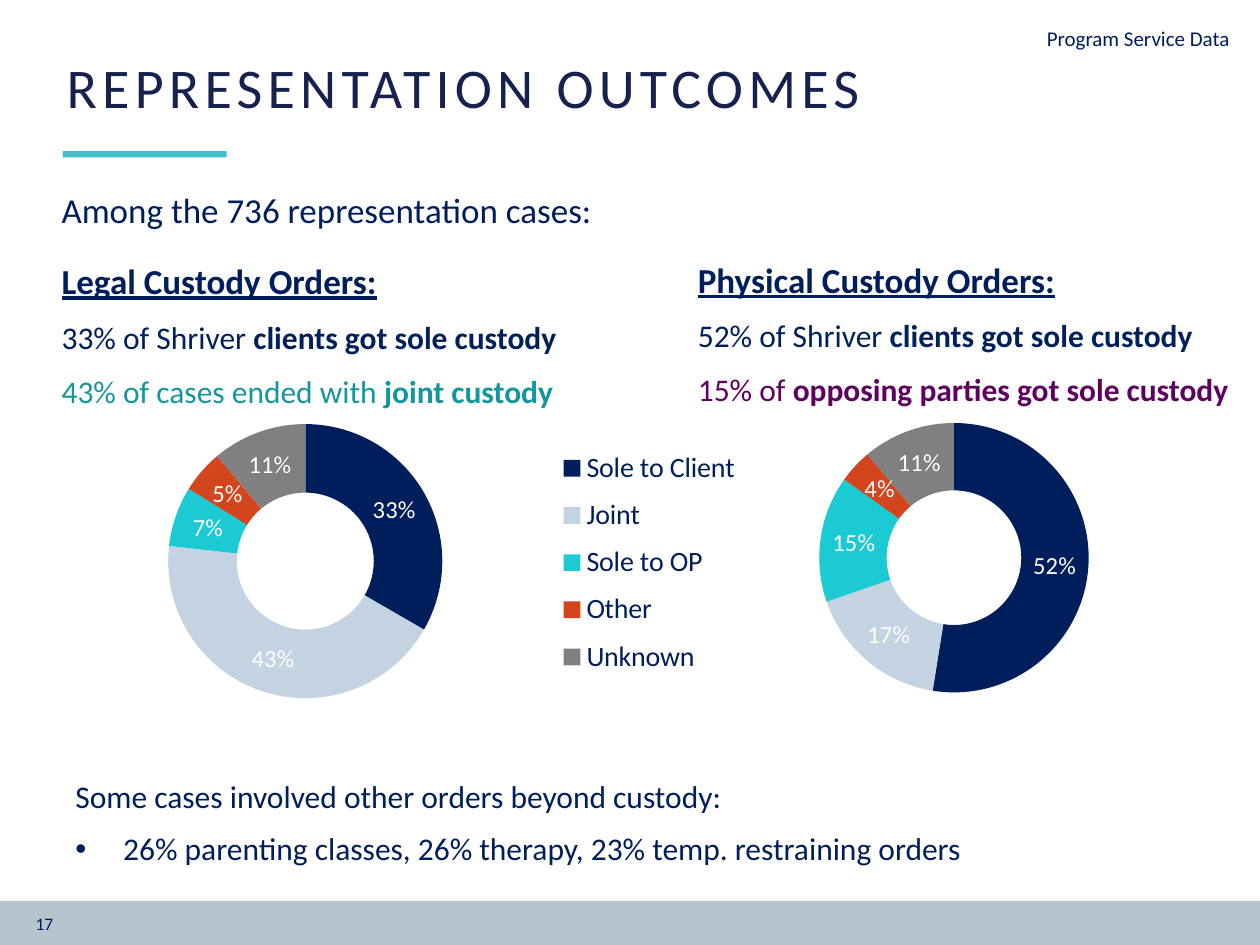
import pptx
import pptx.util
import pptx.chart.data
import pptx.dml.color
import pptx.enum.chart
import pptx.enum.shapes
import pptx.enum.text
import pptx.oxml
import pptx.oxml.ns

Inches, Pt = pptx.util.Inches, pptx.util.Pt
NAVY, BLUE, TEAL, PLUM, WHITE = "001E5B", "00205C", "15969D", "5F005F", "FFFFFF"
SLICES = ["001E5B", "C4D3E1", "1CCAD3", "D3451C", "808080"]
ALIGN = pptx.enum.text.PP_ALIGN

BARS = [((0, 7.15, 10, 0.37), "B5C4CE"), ((0.5, 1.2, 1.3, 0.05), "45BCCE")]


def custody(heading, share, last_share, last_bold, color):
    return [
        [(heading, dict(size=20, bold=True, underline=True))],
        [(share + " ", {}), ("of Shriver ", dict(color=BLUE)),
         ("clients got sole custody", dict(color=BLUE, bold=True))],
        [(last_share, dict(color=color)), (last_bold, dict(color=color, bold=True))],
    ]


# Each text: place, default size, paragraph format, paragraphs of (text, run format)
BODY = dict(line_spacing=1.1, space_after=Pt(6))
ORDERS = dict(line_spacing=1.15, space_after=Pt(6))
TEXTS = [
    ((0, 7.2, 0.52, 0.4), 10, dict(alignment=ALIGN.RIGHT), [[("17", {})]]),
    ((0.43, 0.47, 8.41, 0.54), 32, dict(line_spacing=0.8),
     [[("REPRESENTATION OUTCOMES", dict(color="16214E", spacing=3))]]),
    ((0.39, 1.41, 8.94, 0.45), 20, BODY, [[("Among the 736 representation cases:", {})]]),
    ((0.39, 1.96, 4.49, 1.4), 18, ORDERS,
     custody("Legal Custody Orders:", "33%", "43% of cases ended with ", "joint custody", TEAL)),
    ((5.44, 1.95, 4.49, 1.36), 18, ORDERS,
     custody("Physical Custody Orders:", "52%", "15% of ",
             "opposing parties got sole custody", PLUM)),
    ((0.5, 6.09, 8.83, 0.83), 18, BODY,
     [[("Some cases involved other orders beyond custody:", {})],
      [("26% parenting classes, 26% therapy, 23% temp. restraining orders",
        dict(bullet=True))]]),
    ((8.21, 0.15, 1.74, 0.3), 12, {}, [[("Program Service Data", {})]]),
]

# Layouts are fractions of the chart: left, top, width, height
CHARTS = [
    dict(at=(0.5, 3.27, 5.64, 2.3), plot=(0.148, 0.042, 0.386, 0.946),
         legend=(0.685, 0.09, 0.28, 0.86),
         cats=["Sole to Client", "Joint", "Sole to OP", "Other", "Unknown"],
         vals=[0.33, 0.43, 0.07, 0.05, 0.11]),
    dict(at=(6.35, 3.27, 2.3, 2.3), plot=(0.066, 0.032, 0.93, 0.942), legend=None,
         cats=["1", "2", "3", "4", "5"], vals=[0.52, 0.17, 0.15, 0.04, 0.11]),
]


def rgb(color):
    return pptx.dml.color.RGBColor.from_string(color)


def style(font, size, color=NAVY, **fmt):
    for name, value in dict(name="Calibri", size=Pt(size), **fmt).items():
        setattr(font, name, value)
    font.color.rgb = rgb(color)


def add_bar(s, at, color):
    sp = s.shapes.add_shape(pptx.enum.shapes.MSO_SHAPE.RECTANGLE, *map(Inches, at))
    sp.shadow.inherit = False
    sp.fill.solid()
    sp.fill.fore_color.rgb = rgb(color)
    sp.line.fill.background()


def add_bullet(p):
    pPr = p._p.get_or_add_pPr()
    pPr.set("marL", str(Inches(0.38)))
    pPr.set("indent", str(-Inches(0.38)))
    for tag, key, value in [("a:buFont", "typeface", "Arial"), ("a:buChar", "char", "•")]:
        pptx.oxml.ns.qn(tag)
        pPr.append(pptx.oxml.parse_xml(
            f'<{tag} {pptx.oxml.ns.nsdecls("a")} {key}="{value}"/>'))


def add_text(s, at, size, para_format, paragraphs):
    tf = s.shapes.add_textbox(*map(Inches, at)).text_frame
    tf.word_wrap = True
    for i, runs in enumerate(paragraphs):
        p = tf.add_paragraph() if i else tf.paragraphs[0]
        for name, value in para_format.items():
            setattr(p, name, value)
        for text, fmt in runs:
            fmt = dict(size=size) | fmt
            if fmt.pop("bullet", False):
                add_bullet(p)
            spacing = fmt.pop("spacing", 0)
            r = p.add_run()
            r.text = text
            style(r.font, **fmt)
            if spacing:
                r._r.get_or_add_rPr().set("spc", str(spacing * 100))


def manual_layout(parent, box, after, inner=False):
    """Fix the place of a plot area or legend, as the element following `after`."""
    for old in parent.findall(pptx.oxml.ns.qn("c:layout")):
        parent.remove(old)
    target = '<c:layoutTarget val="inner"/>' if inner else ""
    modes = "".join(f'<c:{k}Mode val="edge"/>' for k in "xy")
    sizes = "".join(f'<c:{k} val="{v}"/>' for k, v in zip("xywh", box))
    layout = pptx.oxml.parse_xml(
        f'<c:layout {pptx.oxml.ns.nsdecls("c")}><c:manualLayout>'
        f'{target}{modes}{sizes}</c:manualLayout></c:layout>')
    if after is None:
        parent.insert(0, layout)
    else:
        after.addnext(layout)


def add_doughnut(s, at, plot, legend, cats, vals):
    data = pptx.chart.data.CategoryChartData(number_format="0%")
    data.categories = cats
    data.add_series("Series 1", vals)
    chart = s.shapes.add_chart(pptx.enum.chart.XL_CHART_TYPE.DOUGHNUT,
                               *map(Inches, at), data).chart
    style(chart.font, 10)
    chart.has_title = False
    chart.has_legend = legend is not None
    if legend:
        chart.legend.position = pptx.enum.chart.XL_LEGEND_POSITION.RIGHT
        chart.legend.include_in_layout = False
        style(chart.legend.font, 16)
        el = chart.legend._element
        manual_layout(el, legend, el.find(pptx.oxml.ns.qn("c:legendPos")))
    pie = chart.plots[0]
    pie.vary_by_categories = True
    pie._element.find(pptx.oxml.ns.qn("c:holeSize")).set("val", "45")
    manual_layout(pie._element.getparent(), plot, None, inner=True)
    series = pie.series[0]
    for i, color in enumerate(SLICES):
        fmt = series.points[i].format
        fmt.fill.solid()
        fmt.fill.fore_color.rgb = rgb(color)
        fmt.line.fill.background()
    labels = series.data_labels
    for name, value in dict(show_value=True, show_percentage=False, number_format="0%",
                            number_format_is_linked=False).items():
        setattr(labels, name, value)
    style(labels.font, 14, WHITE)


def main():
    prs = pptx.Presentation()
    prs.slide_width, prs.slide_height = Inches(10), Inches(7.5)
    s = prs.slides.add_slide(prs.slide_layouts[6])
    for bar in BARS:
        add_bar(s, *bar)
    for chart in CHARTS:
        add_doughnut(s, **chart)
    for text in TEXTS:
        add_text(s, *text)
    prs.save("out.pptx")


if __name__ == "__main__":
    main()
